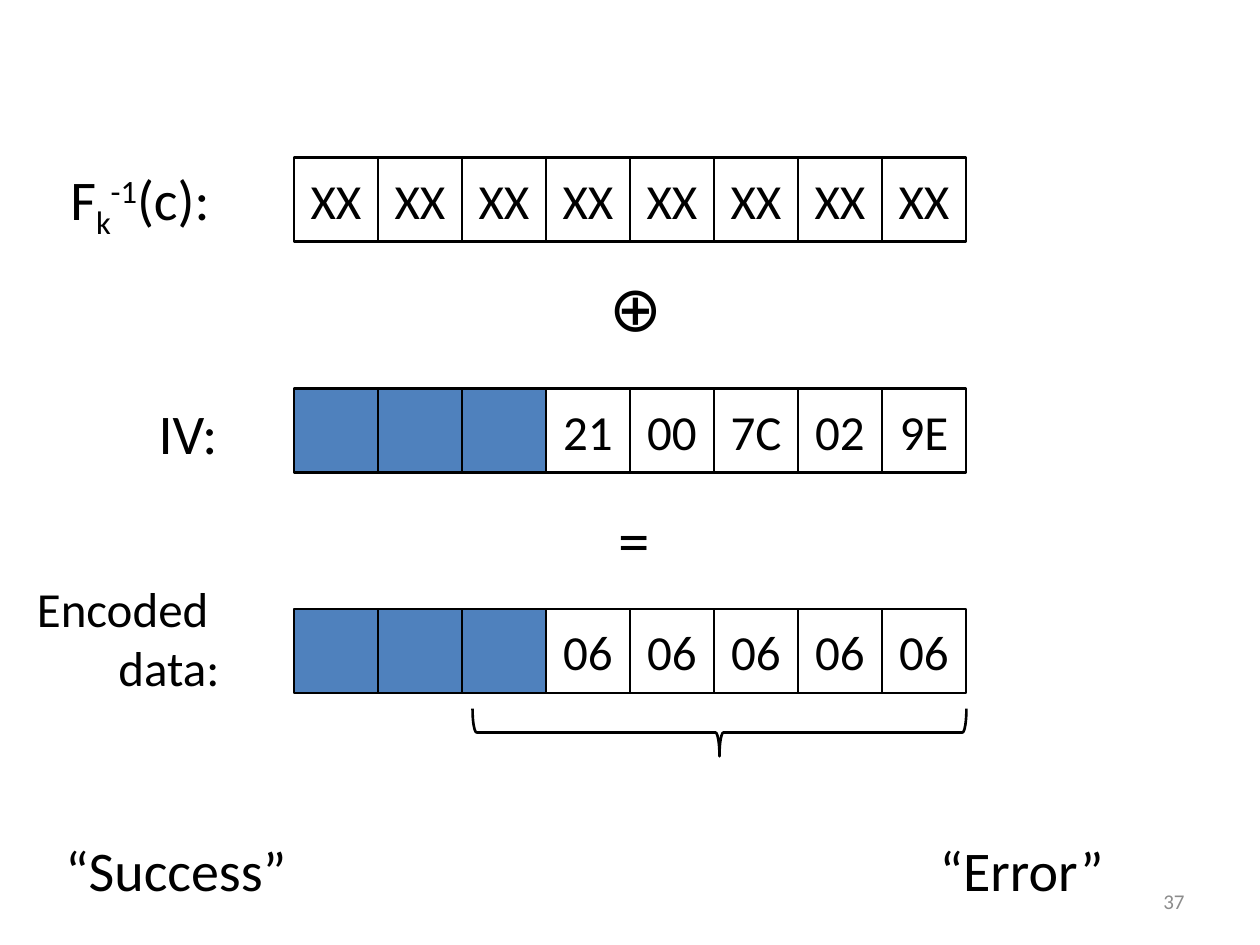
import pptx
import pptx.util
import pptx.dml.color
import pptx.enum.shapes
import pptx.enum.text

THEME = {
    "font": "Calibri",
    "ink": pptx.dml.color.RGBColor(0x00, 0x00, 0x00),
    "muted": pptx.dml.color.RGBColor(0x8C, 0x8C, 0x8C),
    "paper": pptx.dml.color.RGBColor(0xFF, 0xFF, 0xFF),
    "hidden": pptx.dml.color.RGBColor(0x4F, 0x81, 0xBD),
    "byte": 28,
    "label": 32,
    "operator": 36,
    "number": 12,
    "line": pptx.util.Pt(1.5),
}
ALIGN = pptx.enum.text.PP_ALIGN
ANCHOR = pptx.enum.text.MSO_ANCHOR
SHAPE = pptx.enum.shapes.MSO_SHAPE

deck = pptx.Presentation()
deck.slide_width = pptx.util.Inches(10)
deck.slide_height = pptx.util.Inches(7.5)
page = deck.slides.add_slide(deck.slide_layouts[6])
cell = deck.slide_width / 15


def place(*grid):
    return [round(units * cell) for units in grid]


def write(frame, spans, size, align, color=THEME["ink"]):
    para = frame.paragraphs[0]
    para.alignment = align
    para.font.name = THEME["font"]
    para.font.size = pptx.util.Pt(size)
    para.font.color.rgb = color
    for text, baseline in spans:
        span = para.add_run()
        span.text = text
        if baseline:
            span.font._element.set("baseline", str(baseline * 1000))


first_column = 3.5
byte_rows = [
    (1.875, ["XX"] * 8, None),
    (4.625, [None] * 3 + ["21", "00", "7C", "02", "9E"], None),
    (7.25, [None] * 3 + ["06"] * 5, THEME["paper"]),
]
for row, values, background in byte_rows:
    for column, value in enumerate(values, 0):
        box = page.shapes.add_shape(SHAPE.RECTANGLE, *place(first_column + column, row, 1, 1))
        box.shadow.inherit = False
        box.line.color.rgb = THEME["ink"]
        box.line.width = THEME["line"]
        fill = background if value else THEME["hidden"]
        if fill is None:
            box.fill.background()
        else:
            box.fill.solid()
            box.fill.fore_color.rgb = fill
        if value:
            box.text_frame.vertical_anchor = ANCHOR.MIDDLE
            write(box.text_frame, [(value, 0)], THEME["byte"], ALIGN.CENTER)

labels = [
    ([("F", 0), ("k", -25), ("-1", 30), ("(c):", 0)], (0.69, 1.88, 2.06, 0.96), "label", ALIGN.LEFT),
    ([("IV:", 0)], (1.74, 4.67, 1.02, 0.96), "label", ALIGN.LEFT),
    ([("⊕", 0)], (7.11, 3.12, 0.89, 1.07), "operator", ALIGN.LEFT),
    ([("=", 0)], (7.22, 5.88, 0.68, 1.07), "operator", ALIGN.LEFT),
    ([("“Success”", 0)], (0.63, 9.87, 2.96, 0.96), "label", ALIGN.LEFT),
    ([("“Error”", 0)], (11.04, 9.87, 2.27, 0.96), "label", ALIGN.LEFT),
    ([("Encoded \vdata:", 0)], (0.26, 6.81, 2.5, 1.56), "byte", ALIGN.RIGHT),
]
for spans, grid, size, align in labels:
    frame = page.shapes.add_textbox(*place(*grid)).text_frame
    frame.word_wrap = False
    frame.auto_size = pptx.enum.text.MSO_AUTO_SIZE.SHAPE_TO_FIT_TEXT
    if "\v" in spans[0][0]:
        para = frame.paragraphs[0]
        first, second = spans[0][0].split("\v")
        write(frame, [(first, 0)], THEME[size], align)
        para.add_line_break()
        write(frame, [(second, 0)], THEME[size], align)
    else:
        write(frame, spans, THEME[size], align)

brace = page.shapes.add_shape(SHAPE.RIGHT_BRACE, *place(8.28, 5.78, 0.57, 5.88))
brace.rotation = 90
brace.shadow.inherit = False
brace.fill.background()
brace.line.color.rgb = THEME["ink"]
brace.line.width = THEME["line"]

number = page.shapes.add_textbox(*place(10.75, 10.43, 3.5, 0.6)).text_frame
number.word_wrap = True
number.vertical_anchor = ANCHOR.MIDDLE
write(number, [("37", 0)], THEME["number"], ALIGN.RIGHT, THEME["muted"])

deck.save("out.pptx")
